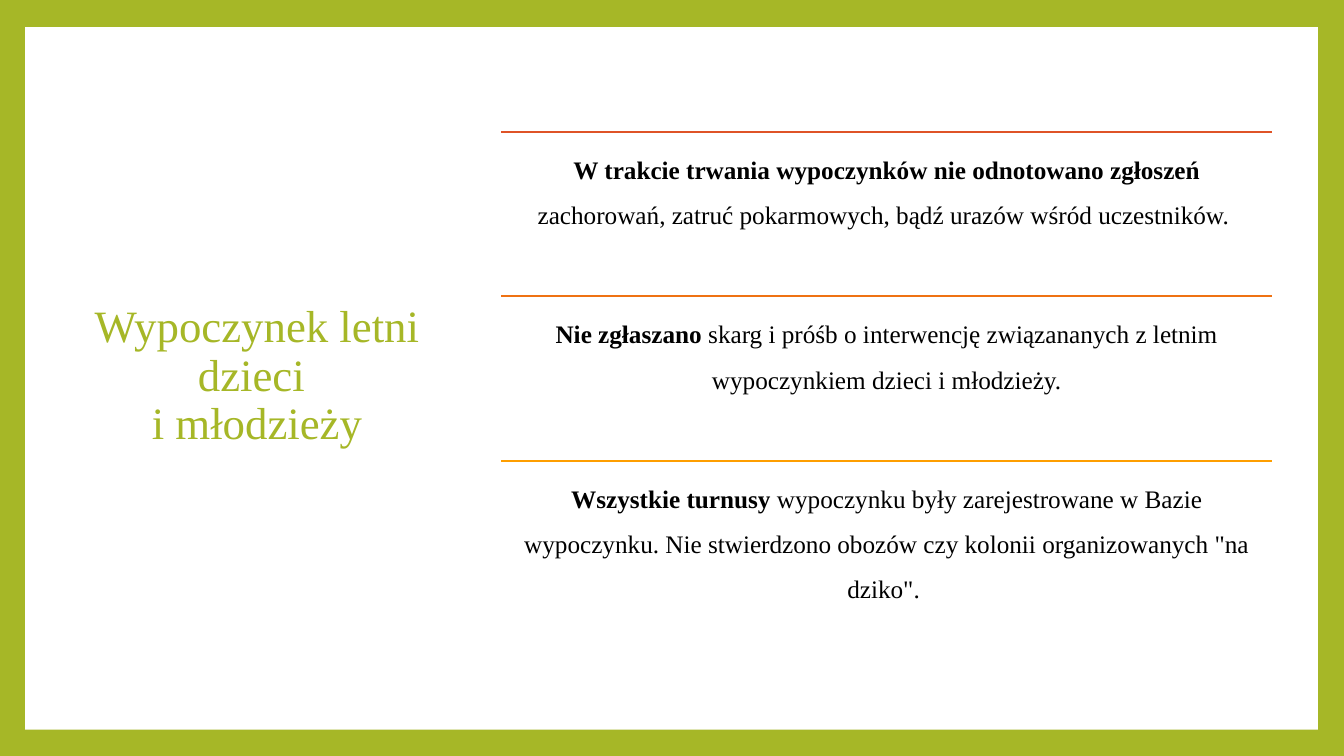
from lxml import etree
from pptx import Presentation
from pptx.dml.color import RGBColor
from pptx.enum.shapes import MSO_CONNECTOR, MSO_SHAPE
from pptx.enum.text import MSO_ANCHOR, MSO_AUTO_SIZE, PP_ALIGN
from pptx.oxml.ns import qn
from pptx.util import Inches, Pt

GREEN = "A6B727"
FONT = "Times New Roman"
TITLE = "Wypoczynek letni dzieci \vi młodzieży"
FINDINGS = [
    ("DF5327", "W trakcie trwania wypoczynków nie odnotowano zgłoszeń ",
     "zachorowań, zatruć pokarmowych, bądź urazów wśród uczestników. "),
    ("EF7213", "Nie zgłaszano ",
     "skarg i próśb o interwencję związananych z letnim wypoczynkiem dzieci i młodzieży."),
    ("FE9E00", "Wszystkie turnusy ",
     "wypoczynku były zarejestrowane w Bazie wypoczynku. "
     "Nie stwierdzono obozów czy kolonii organizowanych \"na dziko\". "),
]


def rgb(value):
    return RGBColor.from_string(value)


def set_attrs(obj, values):
    for name, value in values.items():
        setattr(obj, name, value)


def format_run(r, size, color, bold=False):
    set_attrs(r.font, {"name": FONT, "size": Pt(size), "bold": bold})
    r.font.color.rgb = rgb(color)


def add_panel(s, x, y, w, h):
    """White panel that leaves the green background as a frame."""
    sp = s.shapes.add_shape(MSO_SHAPE.RECTANGLE, Inches(x), Inches(y), Inches(w), Inches(h))
    sp.shadow.inherit = False
    sp.fill.solid()
    sp.fill.fore_color.rgb = rgb("FFFFFF")
    sp.line.fill.background()
    # Keep the panel behind the title
    s.shapes.title.element.addprevious(sp.element)


def add_title(s, x, y, w, h):
    title = s.shapes.title
    set_attrs(title, {"left": Inches(x), "top": Inches(y),
                      "width": Inches(w), "height": Inches(h)})
    tf = title.text_frame
    set_attrs(tf, {"text": TITLE, "word_wrap": True, "auto_size": MSO_AUTO_SIZE.NONE,
                   "vertical_anchor": MSO_ANCHOR.MIDDLE})
    p = tf.paragraphs[0]
    set_attrs(p, {"alignment": PP_ALIGN.CENTER, "line_spacing": 0.9})
    for r in p.runs:
        format_run(r, 32, GREEN)


def add_finding(s, x, y, w, h, color, lead, rest):
    # Coloured rule along the top edge
    rule = s.shapes.add_connector(MSO_CONNECTOR.STRAIGHT, Inches(x), Inches(y),
                                  Inches(x + w), Inches(y))
    rule.line.color.rgb = rgb(color)
    rule.line.width = Pt(1.5)
    etree.SubElement(rule.element.spPr, qn("a:effectLst"))

    # Bold lead followed by plain text
    tf = s.shapes.add_textbox(Inches(x), Inches(y), Inches(w), Inches(h)).text_frame
    tf.word_wrap = True
    set_attrs(tf, {f"margin_{side}": Inches(0.07)
                   for side in ("left", "top", "right", "bottom")})
    p = tf.paragraphs[0]
    set_attrs(p, {"alignment": PP_ALIGN.CENTER, "line_spacing": 1.5})
    for text, bold in ((lead, True), (rest, False)):
        r = p.add_run()
        r.text = text
        format_run(r, 18, "000000", bold)


def add_findings(s, x, y, w, h):
    row_h = h / len(FINDINGS)
    for i, finding in enumerate(FINDINGS):
        add_finding(s, x, y + i * row_h, w, row_h, *finding)


def main():
    prs = Presentation()
    set_attrs(prs, {"slide_width": Inches(13.33), "slide_height": Inches(7.5)})
    s = prs.slides.add_slide(prs.slide_layouts[5])
    s.background.fill.solid()
    s.background.fill.fore_color.rgb = rgb(GREEN)

    add_panel(s, 0.25, 0.27, 12.82, 6.97)
    add_title(s, 0.71, 0.67, 3.68, 6.13)
    add_findings(s, 4.97, 1.31, 7.65, 4.89)
    prs.save("out.pptx")


if __name__ == "__main__":
    main()
